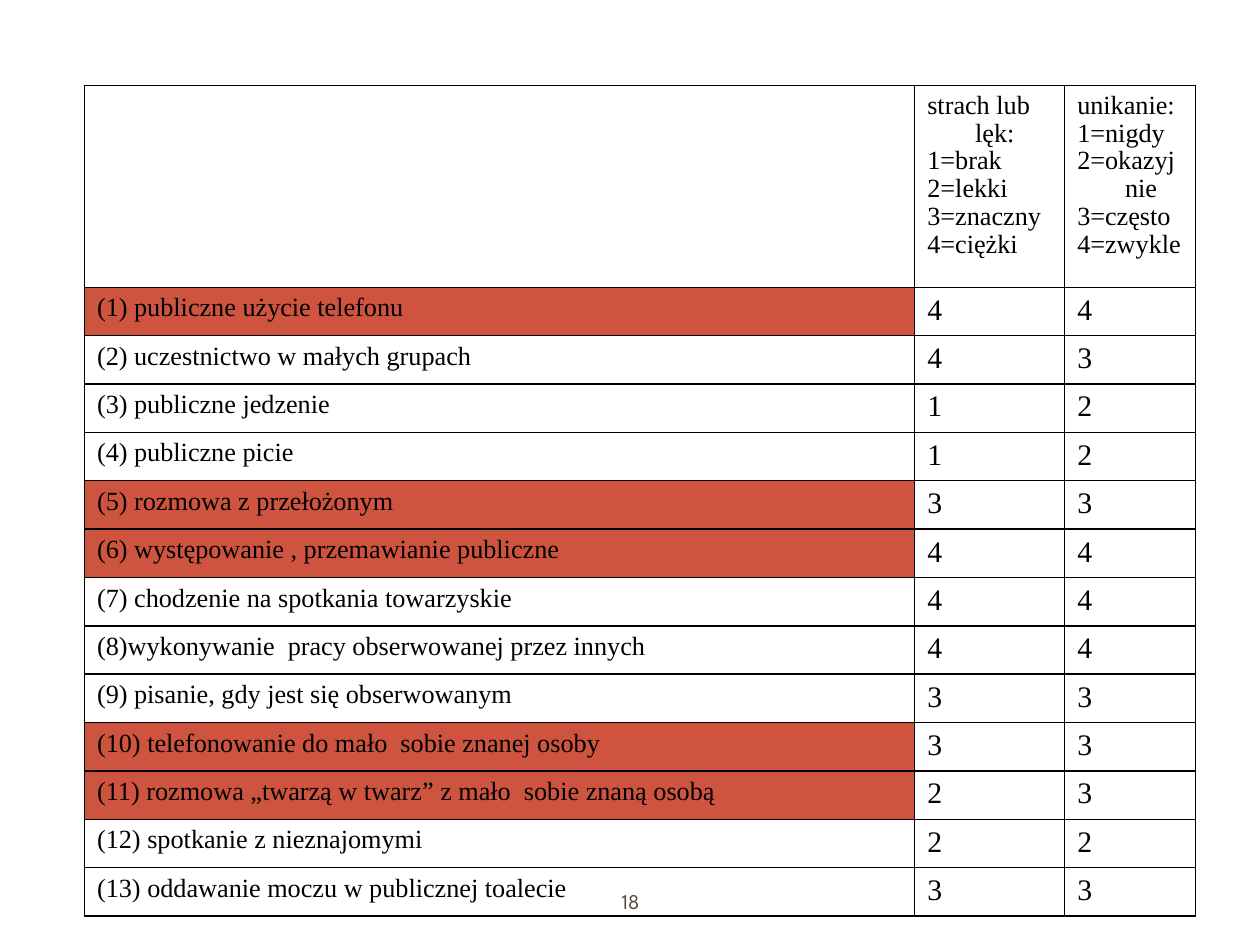
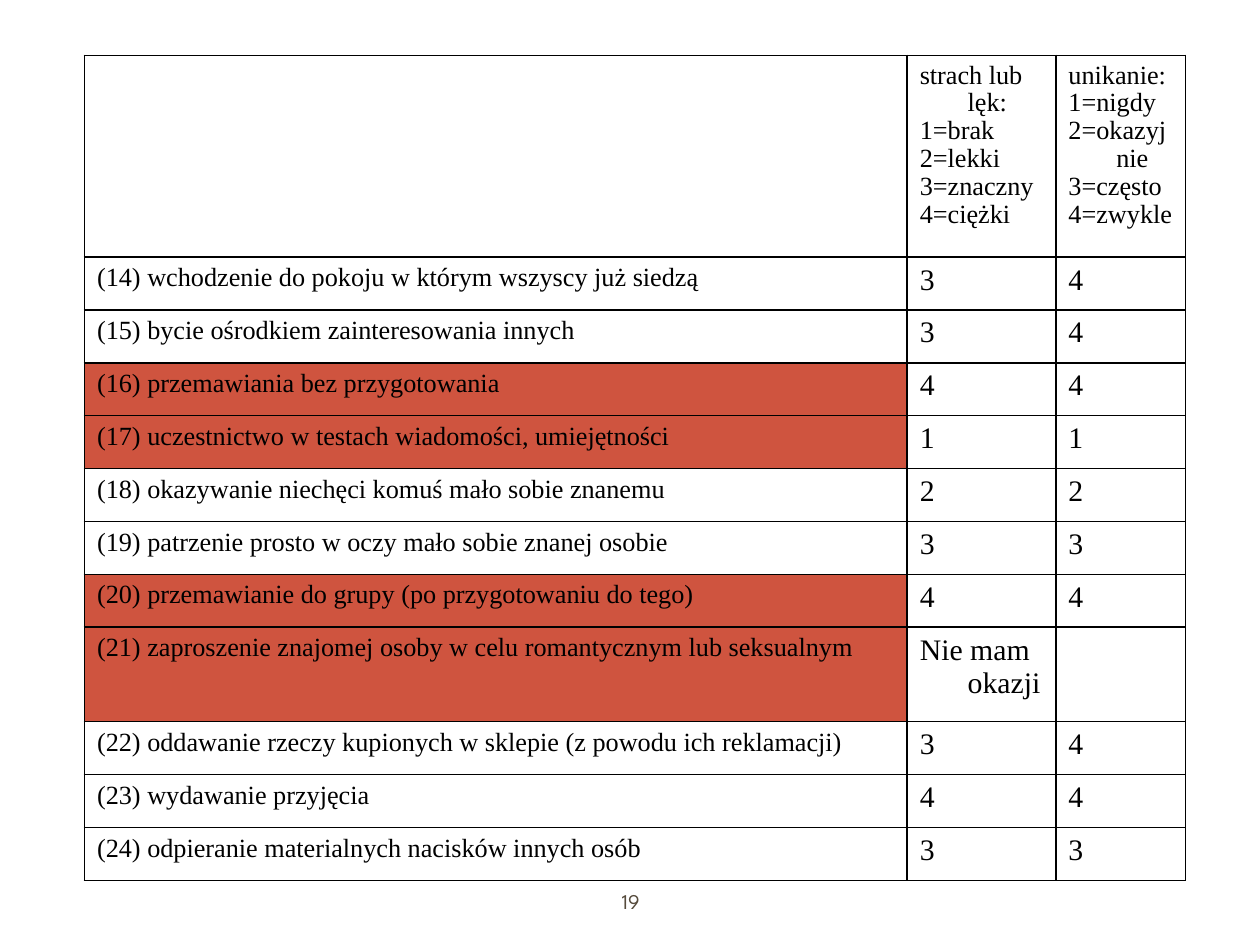
import pptx
import pptx.util
import pptx.dml.color
import pptx.enum.shapes
import pptx.enum.text
import pptx.oxml.ns
import lxml.etree

Inches, Pt = pptx.util.Inches, pptx.util.Pt

# Shared style
WHITE, BLACK, RED, BROWN = "FFFFFF", "000000", "CF543F", "564B3C"
TABLE_FONT, NUMBER_FONT = "Times New Roman", "League Spartan"
LABEL_SIZE, SCORE_SIZE = 15, 17
INDENT = Inches(0.38)
TABLE_LEFT, HEADER_HEIGHT = 0.67, 1.6

HEADER = (
    "",
    "strach lub lęk:\n1=brak\n2=lekki\n3=znaczny\n4=ciężki",
    "unikanie:\n1=nigdy\n2=okazyjnie\n3=często\n4=zwykle",
)

# Situation, fear score, avoidance score
SITUATIONS_1_13 = [
    ("(1) publiczne użycie telefonu", "4", "4"),
    ("(2) uczestnictwo w małych grupach", "4", "3"),
    ("(3) publiczne jedzenie", "1", "2"),
    ("(4) publiczne picie", "1", "2"),
    ("(5) rozmowa z przełożonym", "3", "3"),
    ("(6) występowanie , przemawianie publiczne", "4", "4"),
    ("(7) chodzenie na spotkania towarzyskie", "4", "4"),
    ("(8)wykonywanie  pracy obserwowanej przez innych", "4", "4"),
    ("(9) pisanie, gdy jest się obserwowanym", "3", "3"),
    ("(10) telefonowanie do mało  sobie znanej osoby", "3", "3"),
    ("(11) rozmowa „twarzą w twarz” z mało  sobie znaną osobą", "2", "3"),
    ("(12) spotkanie z nieznajomymi", "2", "2"),
    ("(13) oddawanie moczu w publicznej toalecie", "3", "3"),
]
SITUATIONS_14_24 = [
    ("(14) wchodzenie do pokoju w którym wszyscy już siedzą", "3", "4"),
    ("(15) bycie ośrodkiem zainteresowania innych", "3", "4"),
    ("(16) przemawiania bez przygotowania", "4", "4"),
    ("(17) uczestnictwo w testach wiadomości, umiejętności", "1", "1"),
    ("(18) okazywanie niechęci komuś mało sobie znanemu", "2", "2"),
    ("(19) patrzenie prosto w oczy mało sobie znanej osobie", "3", "3"),
    ("(20) przemawianie do grupy (po przygotowaniu do tego)", "4", "4"),
    ("(21) zaproszenie znajomej osoby w celu romantycznym lub seksualnym",
     "Nie mam okazji", ""),
    ("(22) oddawanie rzeczy kupionych w sklepie (z powodu ich reklamacji)", "3", "4"),
    ("(23) wydawanie przyjęcia", "4", "4"),
    ("(24) odpieranie materialnych nacisków innych osób", "3", "3"),
]


def rgb(color):
    return pptx.dml.color.RGBColor.from_string(color)


def format_run(r, size, font, color):
    r.font.size = Pt(size)
    r.font.name = font
    r.font.color.rgb = rgb(color)


def add_base(prs, number):
    """Add a slide with the rounded panel and the slide number."""
    slide = prs.slides.add_slide(prs.slide_layouts[6])
    sp = slide.shapes.add_shape(
        pptx.enum.shapes.MSO_SHAPE.ROUNDED_RECTANGLE,
        Inches(0.1), Inches(0.11), Inches(9.8), Inches(7.29))
    sp.adjustments[0] = 0.017
    sp.shadow.inherit = False
    sp.fill.solid()
    sp.fill.fore_color.rgb = rgb(WHITE)
    sp.line.fill.background()

    box = slide.shapes.add_textbox(Inches(3.42), Inches(6.95), Inches(3.17), Inches(0.4))
    tf = box.text_frame
    tf.word_wrap = True
    tf.vertical_anchor = pptx.enum.text.MSO_ANCHOR.MIDDLE
    tf.text = str(number)
    p = tf.paragraphs[0]
    p.alignment = pptx.enum.text.PP_ALIGN.CENTER
    format_run(p.runs[0], 12, NUMBER_FONT, BROWN)
    return slide


def add_borders(cell):
    tc_pr = cell._tc.get_or_add_tcPr()
    qn = pptx.oxml.ns.qn
    for side in ("lnL", "lnR", "lnT", "lnB"):
        ln = lxml.etree.SubElement(tc_pr, qn(f"a:{side}"), w=str(Pt(1)))
        fill = lxml.etree.SubElement(ln, qn("a:solidFill"))
        lxml.etree.SubElement(fill, qn("a:srgbClr"), val=BLACK)


def fill_cell(cell, text, size, fill=None, spacing=None):
    add_borders(cell)
    if fill:
        cell.fill.solid()
        cell.fill.fore_color.rgb = rgb(fill)
    else:
        cell.fill.background()
    cell.text_frame.text = text
    for p in cell.text_frame.paragraphs:
        p.line_spacing = spacing
        p_pr = p._p.get_or_add_pPr()
        p_pr.set("marL", str(INDENT))
        p_pr.set("indent", str(-INDENT))
        for r in p.runs:
            format_run(r, size, TABLE_FONT, BLACK)


def add_score_table(slide, top, widths, situations, row_height, red_rows, tall_rows=None):
    """Add the questionnaire; red_rows and tall_rows go by row number in the table."""
    heights = [HEADER_HEIGHT] + [row_height] * len(situations)
    for row, height in (tall_rows or {}).items():
        heights[row] = height
    table = slide.shapes.add_table(
        len(heights), len(widths), Inches(TABLE_LEFT), Inches(top),
        Inches(sum(widths)), Inches(sum(heights))).table
    table.first_row = table.horz_banding = False
    for column, width in zip(table.columns, widths):
        column.width = Inches(width)
    for row, height in zip(table.rows, heights):
        row.height = Inches(height)

    for col, text in enumerate(HEADER):
        fill_cell(table.cell(0, col), text, LABEL_SIZE, spacing=0.96)
    for row, (situation, *scores) in enumerate(situations, 1):
        fill_cell(table.cell(row, 0), situation, LABEL_SIZE,
                  RED if row in red_rows else None)
        for col, score in enumerate(scores, 1):
            fill_cell(table.cell(row, col), score, SCORE_SIZE)


def main():
    prs = pptx.Presentation()
    prs.slide_width, prs.slide_height = Inches(10), Inches(7.5)

    # Situations 1 to 13 share the height left under the header
    slide = add_base(prs, 18)
    add_score_table(slide, 0.68, (6.59, 1.19, 1.04), SITUATIONS_1_13,
                    (6.59 - HEADER_HEIGHT) / len(SITUATIONS_1_13), {1, 5, 6, 10, 11})

    # Situations 14 to 24
    slide = add_base(prs, 19)
    add_score_table(slide, 0.44, (6.53, 1.18, 1.03), SITUATIONS_14_24,
                    0.42, {3, 4, 7, 8}, {8: 0.75})

    prs.save("out.pptx")


if __name__ == "__main__":
    main()
